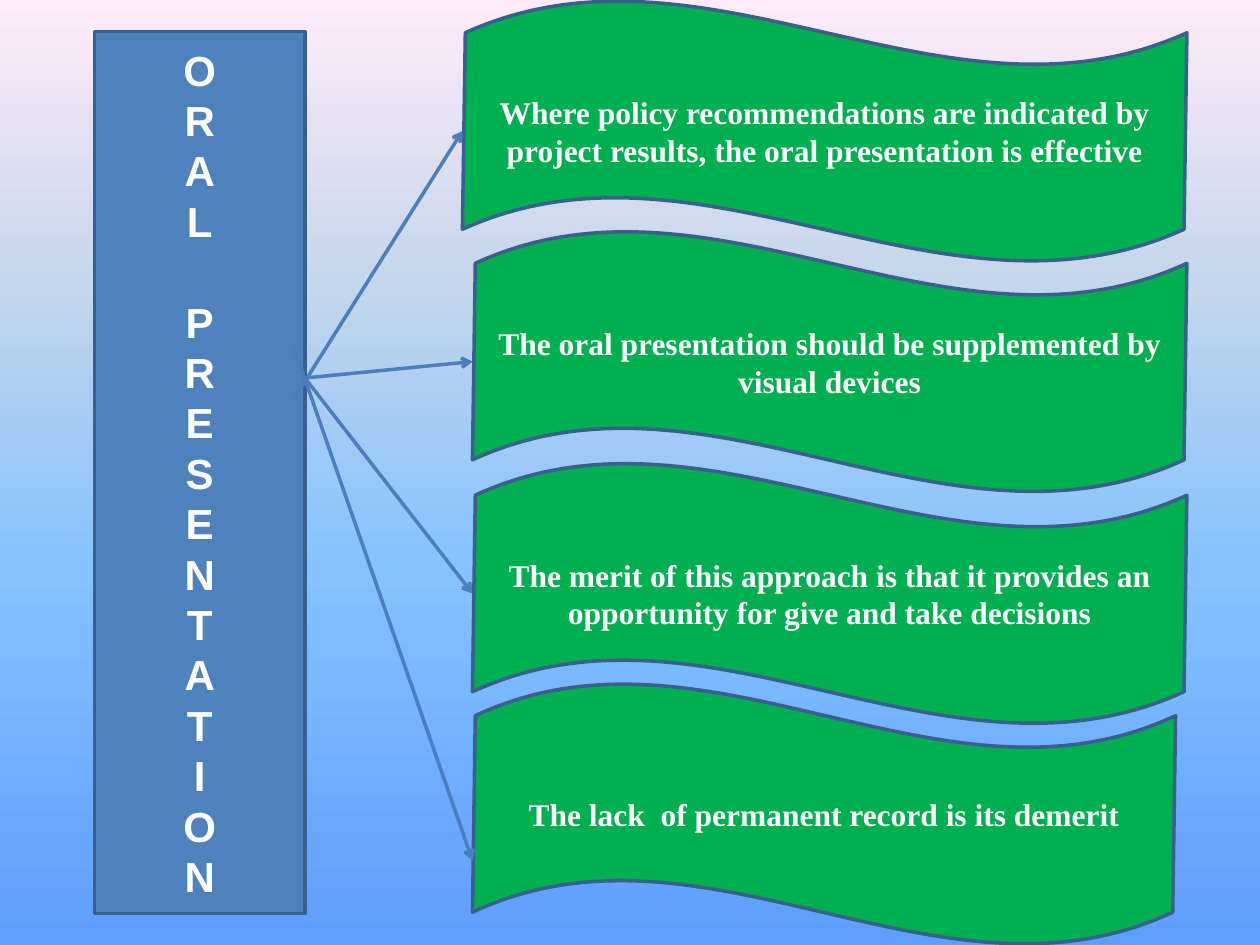
from copy import deepcopy

from lxml.etree import SubElement
from pptx import Presentation
from pptx.dml.color import RGBColor
from pptx.enum.shapes import MSO_CONNECTOR, MSO_SHAPE
from pptx.enum.text import MSO_ANCHOR, PP_ALIGN
from pptx.oxml.ns import qn
from pptx.util import Inches, Pt

WHITE = RGBColor(0xFF, 0xFF, 0xFF)
GREEN = RGBColor(0x00, 0xB0, 0x50)
BLUE = RGBColor(0x4F, 0x81, 0xBD)
OUTLINE = RGBColor(0x3A, 0x5F, 0x8C)
ARROW = RGBColor(0x4B, 0x7E, 0xBC)
SKY = [
    (0, RGBColor(0x5E, 0x9E, 0xFF)),
    (0.4, RGBColor(0x85, 0xC2, 0xFF)),
    (0.7, RGBColor(0xC4, 0xD6, 0xEB)),
    (1, RGBColor(0xFF, 0xEB, 0xFA)),
]

TITLE = "ORAL PRESENTATION"
WAVE_HEIGHT = 2.08
WAVES = [
    (3.67, 0, 5.75, "Where policy recommendations are indicated by project results, "
                    "the oral presentation is effective"),
    (3.75, 1.83, 5.67, "The oral presentation should be supplemented by visual devices"),
    (3.75, 3.67, 5.67, "The merit of this approach is that it provides an opportunity "
                       "for give and take decisions"),
    (3.75, 5.42, 5.58, "The lack  of permanent record is its demerit"),
]
ARROW_STARTS = [(2.33, 3.17), (2.42, 3), (2.42, 3), (2.33, 2.75)]
LAST_ARROW_END = (3.75, 6.83)


class SlideBuilder:
    """Draws styled elements on the current slide."""

    def __init__(self, slide):
        self.slide = slide
        self.line_width = Pt(2)

    def background(self, stops):
        fill = self.slide.background.fill
        fill.gradient()
        fill.gradient_angle = 90
        stop_list = self.slide.element.find(".//" + qn("a:gsLst"))
        while len(stop_list) < len(stops):
            stop_list.append(deepcopy(stop_list[0]))
        for stop, (position, color) in zip(fill.gradient_stops, stops):
            stop.position = position
            stop.color.rgb = color

    def block(self, kind, box, adjustments, color, lines, font_name, font_size):
        shape = self.slide.shapes.add_shape(kind, *map(Inches, box))
        shape.shadow.inherit = False
        for index, value in enumerate(adjustments):
            shape.adjustments[index] = value
        shape.fill.solid()
        shape.fill.fore_color.rgb = color
        shape.line.color.rgb = OUTLINE
        shape.line.width = self.line_width
        frame = shape.text_frame
        frame.word_wrap = True
        frame.vertical_anchor = MSO_ANCHOR.MIDDLE
        for index, line in enumerate(lines):
            paragraph = frame.add_paragraph() if index else frame.paragraphs[0]
            paragraph.alignment = PP_ALIGN.CENTER
            run = paragraph.add_run()
            run.text = line
            run.font.name = font_name
            run.font.size = Pt(font_size)
            run.font.bold = True
            run.font.color.rgb = WHITE
        return shape

    def wave(self, left, top, width, text):
        return self.block(MSO_SHAPE.WAVE, (left, top, width, WAVE_HEIGHT),
                          (0.125, -0.002), GREEN, [text], "Times New Roman", 18)

    def banner(self, text):
        return self.block(MSO_SHAPE.ROUNDED_RECTANGLE, (0.75, 0.25, 1.67, 7),
                          (0,), BLUE, text, "Arial", 24)

    def arrow(self, start, end, target=None):
        connector = self.slide.shapes.add_connector(
            MSO_CONNECTOR.STRAIGHT, *map(Inches, (*start, *end)))
        if target is not None:
            connector.end_connect(target, 1)
        connector.line.color.rgb = ARROW
        connector.line.width = self.line_width
        properties = connector.element.spPr
        SubElement(properties.find(qn("a:ln")), qn("a:tailEnd"), type="arrow")
        SubElement(properties, qn("a:effectLst"))


def main():
    presentation = Presentation()
    presentation.slide_width = Inches(10)
    presentation.slide_height = Inches(7.5)
    builder = SlideBuilder(presentation.slides.add_slide(presentation.slide_layouts[6]))
    builder.background(SKY)
    waves = [builder.wave(*wave) for wave in WAVES]
    builder.banner(TITLE)
    for start, wave, (left, top, *_) in zip(ARROW_STARTS[:-1], waves, WAVES):
        builder.arrow(start, (left, top + WAVE_HEIGHT / 2), wave)
    builder.arrow(ARROW_STARTS[-1], LAST_ARROW_END)
    presentation.save("out.pptx")


if __name__ == "__main__":
    main()
